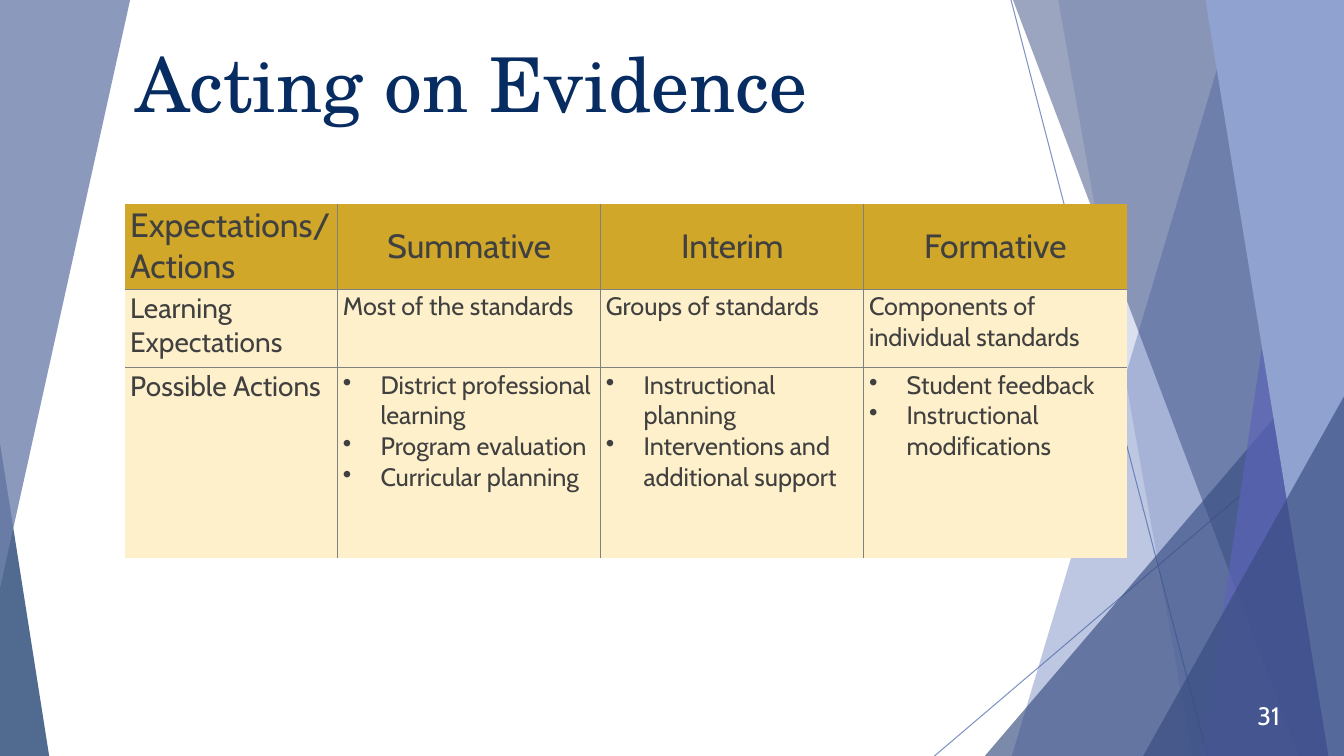
"""Builds the slide "Acting on Evidence" with its faceted side panels and table."""
from collections import namedtuple
from dataclasses import dataclass

from lxml.etree import SubElement
from pptx import Presentation
from pptx.dml.color import RGBColor as RGB
from pptx.enum.shapes import MSO_CONNECTOR as LINK, MSO_SHAPE as SHAPE
from pptx.enum.text import MSO_ANCHOR as ANCHOR, MSO_AUTO_SIZE as FIT, PP_ALIGN as ALIGN
from pptx.oxml import parse_xml
from pptx.oxml.ns import nsdecls, qn
from pptx.util import Cm, Pt

Box = namedtuple("Box", "x y w h")


@dataclass(frozen=True)
class Theme:
    """Colours, fonts and type sizes of the slide."""
    navy: str = "072C62"
    blue: str = "4A66AC"
    deep: str = "384C81"
    violet: str = "5C64B7"
    sky: str = "90A2CF"
    slate: str = "6F81AC"
    gold: str = "D0A728"
    cream: str = "FEF0CA"
    ink: str = "404040"
    rule: str = "808080"
    white: str = "FFFFFF"
    serif: str = "TeX Gyre Schola"
    sans: str = "Cabin"
    title: int = 54
    head: int = 24
    label: int = 20
    body: int = 18


THEME = Theme()

HEADS = ["Expectations/Actions", "Summative", "Interim", "Formative"]
GOALS = ["Learning Expectations", "Most of the standards", "Groups of standards",
         "Components of individual standards"]
ACTIONS = ["Possible Actions",
           ["District professional learning", "Program evaluation", "Curricular planning"],
           ["Instructional planning", "Interventions and additional support"],
           ["Student feedback", "Instructional modifications"]]


def fade(shape, alpha):
    """Set the opacity, in percent, of the colour of a shape."""
    tint = next(shape.element.spPr.iter(qn("a:srgbClr")))
    SubElement(tint, qn("a:alpha"), val=str(alpha * 1000))


def paint(shape, color, alpha):
    """Fill a shape with a plain colour, without outline or shadow."""
    shape.shadow.inherit = False
    shape.fill.solid()
    shape.fill.fore_color.rgb = RGB.from_string(color)
    shape.line.fill.background()
    fade(shape, alpha)


def style(par, size, color, face=THEME.sans, align=ALIGN.LEFT):
    """Set the font and alignment of a paragraph."""
    par.alignment = align
    par.font.name = face
    par.font.size = Pt(size)
    par.font.bold = False
    par.font.color.rgb = RGB.from_string(color)


def wedge(slide, box, apex, color, alpha):
    """Draw a triangle whose tip is at the left (0) or right (1) of its box."""
    shape = slide.shapes.add_shape(SHAPE.ISOSCELES_TRIANGLE, *map(Cm, box))
    shape.adjustments[0] = apex
    paint(shape, color, alpha)
    return shape


def band(slide, box, top, base, color, alpha):
    """Draw a slanted band that reaches in from the right edge of the box."""
    right, foot = box.x + box.w, box.y + box.h
    pen = slide.shapes.build_freeform(Cm(right - top), Cm(box.y))
    spots = [(right, box.y), (right, foot), (right - base, foot)]
    pen.add_line_segments([(Cm(x), Cm(y)) for x, y in spots], close=True)
    paint(pen.convert_to_shape(), color, alpha)


def corner(slide, box, wide, high):
    """Draw a triangle in the bottom right corner of the box."""
    spot = Box(box.x + box.w - wide, box.y + box.h - high, wide, high)
    wedge(slide, spot, 1, THEME.deep, 66)


def ray(slide, start, end):
    """Draw a thin line."""
    line = slide.shapes.add_connector(LINK.STRAIGHT, *map(Cm, start + end))
    line.line.color.rgb = RGB.from_string(THEME.blue)
    line.line.width = Pt(0.75)
    fade(line, 70)
    SubElement(line.element.spPr, qn("a:effectLst"))


def facets(slide, box):
    """Draw the lines, bands and corners on the right."""
    right, foot = box.x + box.w, box.y + box.h
    ray(slide, (right - 8.39, box.y), (right - 3.44, foot))
    ray(slide, (right, foot - 8.79), (box.x, foot))
    band(slide, box, 2.68, 8.37, THEME.blue, 36)
    band(slide, box, 7.2, 3.82, THEME.blue, 20)
    corner(slide, box, 9.05, 10.58)
    band(slide, box, 8.34, 1.13, THEME.deep, 50)
    band(slide, box, 0.77, 3.59, THEME.violet, 70)
    band(slide, box, 3.49, 0.39, THEME.sky, 100)
    corner(slide, box, 5.06, 9.06)


def edge(slide, box):
    """Draw the two triangles on the left."""
    low = Box(box.x, box.y + box.h - 7.88, 1.24, 7.88)
    wedge(slide, low, 0, THEME.navy, 70)
    top = wedge(slide, Box(box.x, box.y, box.w, 14.83), 0, THEME.slate, 80)
    top.element.spPr.xfrm.set("flipV", "1")


def title(slide, box, text):
    """Place the title in front of the panels."""
    head = slide.shapes.title
    head.left, head.top, head.width, head.height = map(Cm, box)
    frame = head.text_frame
    frame.text = text
    frame.word_wrap = True
    frame.auto_size = FIT.NONE
    frame.vertical_anchor = ANCHOR.TOP
    style(frame.paragraphs[0], THEME.title, THEME.navy, THEME.serif)
    head.element.getparent().append(head.element)


def rules(cell, sides):
    """Draw the given sides of a cell and clear the others."""
    for spot, side in enumerate("LRTB"):
        fill = (f'<a:solidFill><a:srgbClr val="{THEME.rule}"/></a:solidFill>'
                if side in sides else "<a:noFill/>")
        line = parse_xml(f'<a:ln{side} {nsdecls("a")} w="{Pt(1)}">{fill}</a:ln{side}>')
        cell._tc.get_or_add_tcPr().insert(spot, line)


def bullet(par):
    """Give a paragraph a bullet and a hanging indent."""
    props = par._p.get_or_add_pPr()
    props.set("marL", str(Cm(0.95)))
    props.set("indent", str(-Cm(0.95)))
    SubElement(props, qn("a:buChar"), char="•")


def write(cell, item, size, align):
    """Write a text, or a list as bullets, into a cell."""
    frame = cell.text_frame
    cell.margin_left = cell.margin_right = Cm(0.13)
    cell.margin_top = cell.margin_bottom = Cm(0.05)
    listed = isinstance(item, list)
    frame.text = "\n".join(item) if listed else item
    for par in frame.paragraphs:
        style(par, size, THEME.ink, align=align)
        if listed:
            bullet(par)


def grid(slide, box, rows):
    """Place the table, ruled on its inner sides only."""
    last, end = len(rows) - 1, len(rows[0]) - 1
    table = slide.shapes.add_table(last + 1, end + 1, *map(Cm, box)).table
    table.horz_banding = False
    first = 5.36
    for c, col in enumerate(table.columns):
        col.width = Cm(first if c == 0 else (box.w - first) / end)
    for row, high in zip(table.rows, (2.13, 1.98, 4.78)):
        row.height = Cm(high)
    for r, row in enumerate(rows):
        for c, item in enumerate(row):
            cell = table.cell(r, c)
            mid = r == 0 and c > 0
            size = THEME.head if r == 0 else THEME.label if c == 0 else THEME.body
            write(cell, item, size, ALIGN.CENTER if mid else ALIGN.LEFT)
            cell.vertical_anchor = ANCHOR.MIDDLE if mid else ANCHOR.TOP
            cell.fill.solid()
            cell.fill.fore_color.rgb = RGB.from_string(THEME.cream if r else THEME.gold)
            shown = zip("LRTB", (c > 0, c < end, r > 0, r < last))
            rules(cell, [side for side, on in shown if on])


def folio(slide, box, text):
    """Place the page number."""
    frame = slide.shapes.add_textbox(*map(Cm, box)).text_frame
    frame.text = text
    frame.word_wrap = True
    frame.vertical_anchor = ANCHOR.MIDDLE
    style(frame.paragraphs[0], THEME.body, THEME.white, align=ALIGN.RIGHT)


def main():
    """Build the slide and save it."""
    deck = Presentation()
    wide, high = 33.87, 19.05
    deck.slide_width, deck.slide_height = Cm(wide), Cm(high)
    slide = deck.slides.add_slide(deck.slide_layouts[5])
    facets(slide, Box(wide - 10.32, 0, 10.32, high))
    edge(slide, Box(0, 0, 3.28, high))
    title(slide, Box(3.15, 0.81, 24.97, 3.66), "Acting on Evidence")
    grid(slide, Box(3.15, 5.13, 25.25, 8.89), [HEADS, GOALS, ACTIONS])
    folio(slide, Box(30.61, 17.53, 1.9, 1.02), "31")
    deck.save("out.pptx")


if __name__ == "__main__":
    main()
